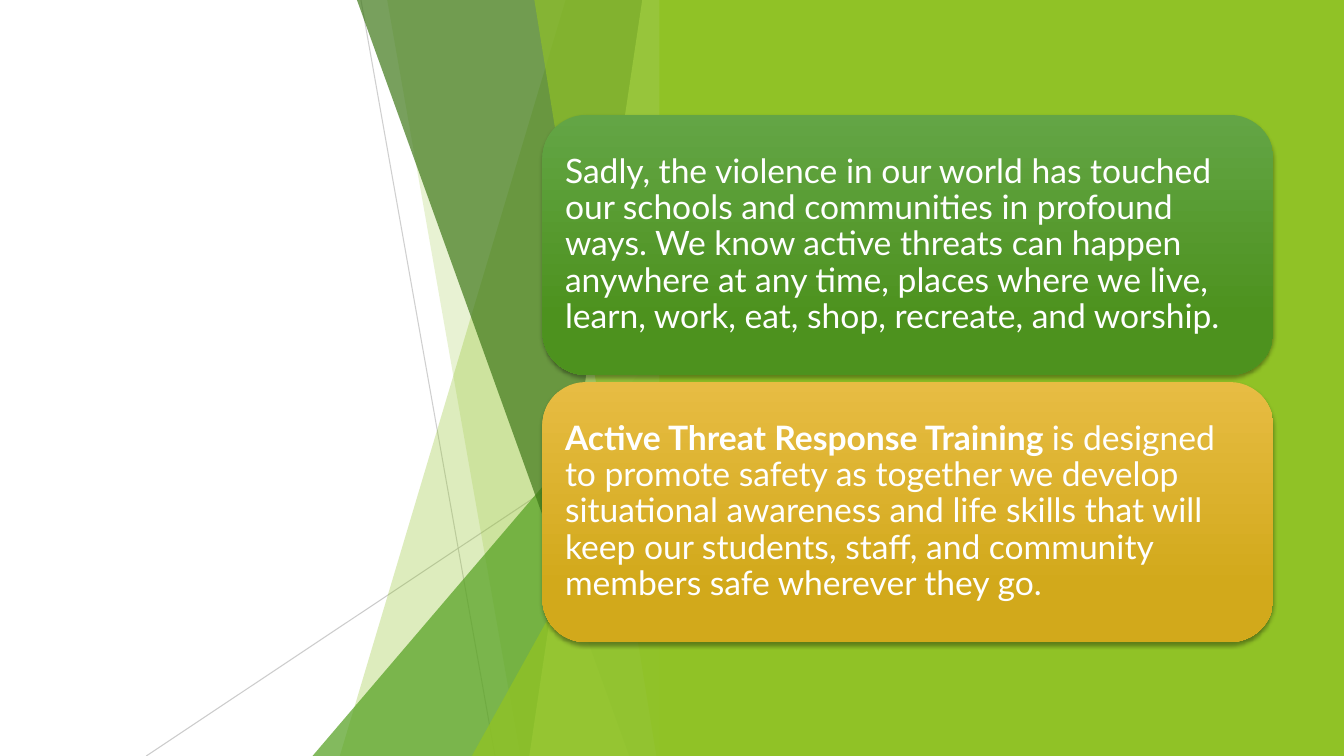
from dataclasses import dataclass

from lxml import etree
from pptx import Presentation, util as u
from pptx.dml.color import RGBColor
from pptx.enum import shapes as sh, text as tx
from pptx.oxml import ns


@dataclass(frozen=True)
class Theme:
    lime: str = "90C226"
    leaf: str = "54A021"
    pine: str = "3F7819"
    pale: str = "C0E474"
    gray: str = "BFBFBF"
    white: str = "FFFFFF"
    green: tuple = ("63A545", "4D921E")
    gold: tuple = ("E7BC43", "D2A91B")
    font: str = "Lato"
    size: int = 24


T = Theme()
WIDE, HIGH = 13.33, 7.5

# Facets from back to front: a band has its slanted edge's top and bottom x,
# a wedge has its left and top; all end at the right edge of their box.
FACETS = [
    ("band", 5.61, 3.37, T.lime, 30),
    ("band", 3.84, 5.16, T.lime, 20),
    ("wedge", 3.1, 3.33, T.leaf, 72),
    ("band", 3.54, 6.24, T.pine, 70),
    ("band", 6.37, 5.25, T.pale, 70),
    ("band", 5.3, 6.51, T.lime, 65),
    ("wedge", 4.68, 3.93, T.lime, 80),
]
RAYS = [((3.58, 0), (4.91, 7.5), 75), ((6.66, 4.03), (1.45, 7.5), 80)]

CARDS = [
    (T.green, [
        ("Sadly, the violence in our world has touched our schools and "
         "communities in profound ways. We know active threats can happen "
         "anywhere at any time, places where we live, learn, work, eat, "
         "shop, recreate, and worship.", False)]),
    (T.gold, [
        ("Active Threat Response Training ", True),
        ("is designed to promote safety as together we develop situational "
         "awareness and life skills that will keep our students, staff, and "
         "community members safe wherever they go.", False)]),
]


def apply(obj, **form):
    for key, val in form.items():
        setattr(obj, key, val)


def fade(fill, alpha):
    """Set the opacity, in percent, of a solid fill's colour element."""
    tone = fill.find(".//" + ns.qn("a:srgbClr"))
    etree.SubElement(tone, ns.qn("a:alpha"), val=str(alpha * 1000))


def paint(shape, tone, alpha=100):
    shape.shadow.inherit = False
    shape.fill.solid()
    shape.fill.fore_color.rgb = RGBColor.from_string(tone)
    shape.line.fill.background()
    if alpha < 100:
        fade(shape._element.spPr.find(ns.qn("a:solidFill")), alpha)


def add(slide, kind, box):
    return slide.shapes.add_shape(kind, *map(u.Inches, box))


def band(slide, box, top, low):
    """Draw a quad from a slanted left edge to the right edge of the box."""
    x, y, w, h = box
    pts = [(x + top, y), (x + w, y), (x + w, y + h), (x + low, y + h)]
    pts = [tuple(map(u.Inches, p)) for p in pts]
    pen = slide.shapes.build_freeform(*pts[0])
    pen.add_line_segments(pts[1:], close=True)
    return pen.convert_to_shape()


def wedge(slide, box, left, top):
    """Draw a right triangle in the lower right corner of the box."""
    x, y, w, h = box
    shape = add(slide, sh.MSO_SHAPE.ISOSCELES_TRIANGLE,
                (x + left, y + top, w - left, h - top))
    shape.adjustments[0] = 1
    return shape


def facets(slide, box):
    x, y = box[:2]
    for (ax, ay), (bx, by), alpha in RAYS:
        ends = map(u.Inches, (x + ax, y + ay, x + bx, y + by))
        ray = slide.shapes.add_connector(sh.MSO_CONNECTOR.STRAIGHT, *ends)
        ray.line.width = u.Pt(0.75)
        ray.line.color.rgb = RGBColor.from_string(T.gray)
        prop = ray._element.spPr
        fade(prop, alpha)
        etree.SubElement(prop, ns.qn("a:effectLst"))
    draw = {"band": band, "wedge": wedge}
    for kind, a, b, tone, alpha in FACETS:
        paint(draw[kind](slide, box, a, b), tone, alpha)


def shade(shape, tones):
    """Give a shape a downward gradient and a soft shadow below it."""
    fill = shape.fill
    fill.gradient()
    fill.gradient_angle = 270
    for stop, tone, pos in zip(fill.gradient_stops, tones, (0, 0.78)):
        stop.color.rgb = RGBColor.from_string(tone)
        stop.position = pos
    shape.line.fill.background()
    shape.shadow.inherit = False
    glow = etree.SubElement(
        shape._element.spPr.find(ns.qn("a:effectLst")), ns.qn("a:outerShdw"),
        blurRad=str(u.Pt(3)), dist=str(u.Pt(2)), dir="5400000",
        rotWithShape="0")
    tone = etree.SubElement(glow, ns.qn("a:srgbClr"), val="000000")
    etree.SubElement(tone, ns.qn("a:alpha"), val="35000")


def card(slide, box, tones, runs):
    shape = add(slide, sh.MSO_SHAPE.ROUNDED_RECTANGLE, box)
    shade(shape, tones)
    frame = shape.text_frame
    pad = u.Inches(0.1)
    apply(frame, word_wrap=True, vertical_anchor=tx.MSO_ANCHOR.MIDDLE,
          margin_left=pad, margin_right=pad, margin_top=pad,
          margin_bottom=pad)
    para = frame.paragraphs[0]
    apply(para, alignment=tx.PP_ALIGN.LEFT, line_spacing=0.9)
    for words, bold in runs:
        run = para.add_run()
        run.text = words
        apply(run.font, name=T.font, size=u.Pt(T.size), bold=bold)
        run.font.color.rgb = RGBColor.from_string(T.white)


def cards(slide, box, gap=0.07):
    """Stack the cards in the box at equal heights."""
    x, y, w, h = box
    tall = (h - gap * (len(CARDS) - 1)) / len(CARDS)
    for i, (tones, runs) in enumerate(CARDS):
        card(slide, (x, y + i * (tall + gap), w, tall), tones, runs)


def main():
    deck = Presentation()
    apply(deck, slide_width=u.Inches(WIDE), slide_height=u.Inches(HIGH))
    slide = deck.slides.add_slide(deck.slide_layouts[6])
    facets(slide, (0, 0, 6.66, HIGH))
    panel = add(slide, sh.MSO_SHAPE.RECTANGLE, (6.54, 0, WIDE - 6.54, HIGH))
    paint(panel, T.lime)
    cards(slide, (5.38, 1.14, 7.25, 5.23))
    deck.save("out.pptx")


if __name__ == "__main__":
    main()
